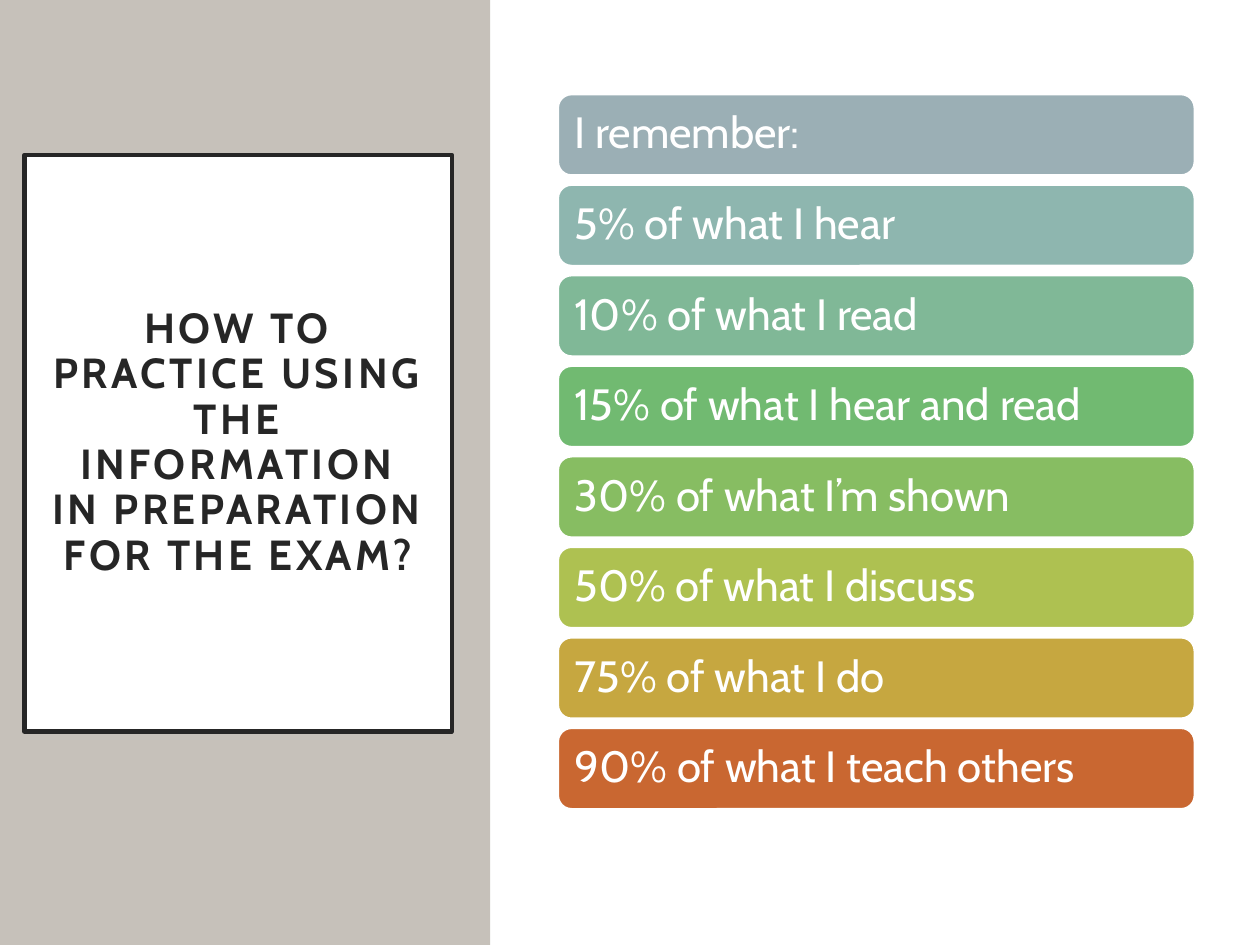
from pptx import Presentation
from pptx.dml.color import RGBColor
from pptx.enum.shapes import MSO_SHAPE as Shape
from pptx.enum.text import MSO_ANCHOR as Anchor, MSO_AUTO_SIZE as AutoSize, PP_ALIGN as Align
from pptx.util import Inches, Pt

WIDTH, HEIGHT = 10, 7.5
COLORS = {"panel": "C6C1BA", "paper": "FFFFFF", "ink": "262626"}
TITLE = "HOW TO PRACTICE USING THE INFORMATION IN PREPARATION FOR THE EXAM?"
BARS = {
    "I remember:": "9BAFB5",
    "5% of what I hear": "8EB6AF",
    "10% of what I read": "80B897",
    "15% of what I hear and read": "71BA71",
    "30% of what I’m shown": "87BD62",
    "50% of what I discuss": "AEC151",
    "75% of what I do": "C6A740",
    "90% of what I teach others": "C96731",
}


def set_all(target, values):
    """Set every named attribute on the target."""
    for name, value in values.items():
        setattr(target, name, value)


def place(shape, box):
    """Put a shape in a box of left, top, width and height in inches."""
    set_all(shape, dict(zip(("left", "top", "width", "height"), map(Inches, box))))


def paint(shape, fill, line=None, weight=1):
    """Give a shape a solid fill and an outline, or no outline."""
    shape.fill.solid()
    shape.fill.fore_color.rgb = RGBColor.from_string(fill)
    if line:
        shape.line.color.rgb = RGBColor.from_string(line)
        shape.line.width = Pt(weight)
    else:
        shape.line.fill.background()


def add_box(page, kind, box, fill, line=None):
    """Add a preset shape without a shadow."""
    shape = page.shapes.add_shape(kind, *map(Inches, box))
    shape.shadow.inherit = False
    paint(shape, fill, line)
    return shape


def write(shape, text, color, size, inset, align, bold=False):
    """Write one formatted paragraph in a shape."""
    frame = shape.text_frame
    margins = dict.fromkeys(
        ("margin_left", "margin_top", "margin_right", "margin_bottom"), Inches(inset))
    set_all(frame, {"word_wrap": True, "auto_size": AutoSize.NONE,
                    "vertical_anchor": Anchor.MIDDLE, **margins})
    para = frame.paragraphs[0]
    set_all(para, {"alignment": align, "line_spacing": 0.9})
    span = para.add_run()
    span.text = text
    set_all(span.font, {"name": "Cabin", "size": Pt(size), "bold": bold})
    span.font.color.rgb = RGBColor.from_string(color)
    return span


def build_title_panel(page, box):
    """Fill the side panel and frame the title within it."""
    left, top, width, height = box
    panel = add_box(page, Shape.RECTANGLE, box, COLORS["panel"])
    title = page.shapes.title
    title._element.addprevious(panel._element)
    place(title, (left + 0.05 * width, top + 0.164 * height, 0.872 * width, 0.61 * height))
    paint(title, COLORS["paper"], COLORS["ink"], 2.5)
    span = write(title, TITLE, COLORS["ink"], 24, 0.2, Align.CENTER, bold=True)
    span.font._element.set("spc", "200")


def build_bars(page, box):
    """Stack one rounded bar per statement at equal steps down the box."""
    left, top, width, height = box
    bar_height = 0.64
    step = (height - bar_height) / (len(BARS) - 1)
    for row, (text, color) in enumerate(BARS.items()):
        bar = add_box(page, Shape.ROUNDED_RECTANGLE,
                      (left, top + row * step, width, bar_height), color, COLORS["paper"])
        write(bar, text, COLORS["paper"], 25, 0.1, Align.LEFT)


def main():
    """Build the slide and save the deck."""
    deck = Presentation()
    set_all(deck, {"slide_width": Inches(WIDTH), "slide_height": Inches(HEIGHT)})
    page = deck.slides.add_slide(deck.slide_layouts[5])
    split = 0.39 * WIDTH
    build_title_panel(page, (0, 0, split - 0.01, HEIGHT))
    add_box(page, Shape.RECTANGLE, (split, 0, WIDTH - split, HEIGHT), COLORS["paper"])
    build_bars(page, (0.443 * WIDTH, 0.1 * HEIGHT, 0.505 * WIDTH, 0.756 * HEIGHT))
    deck.save("out.pptx")


if __name__ == "__main__":
    main()
